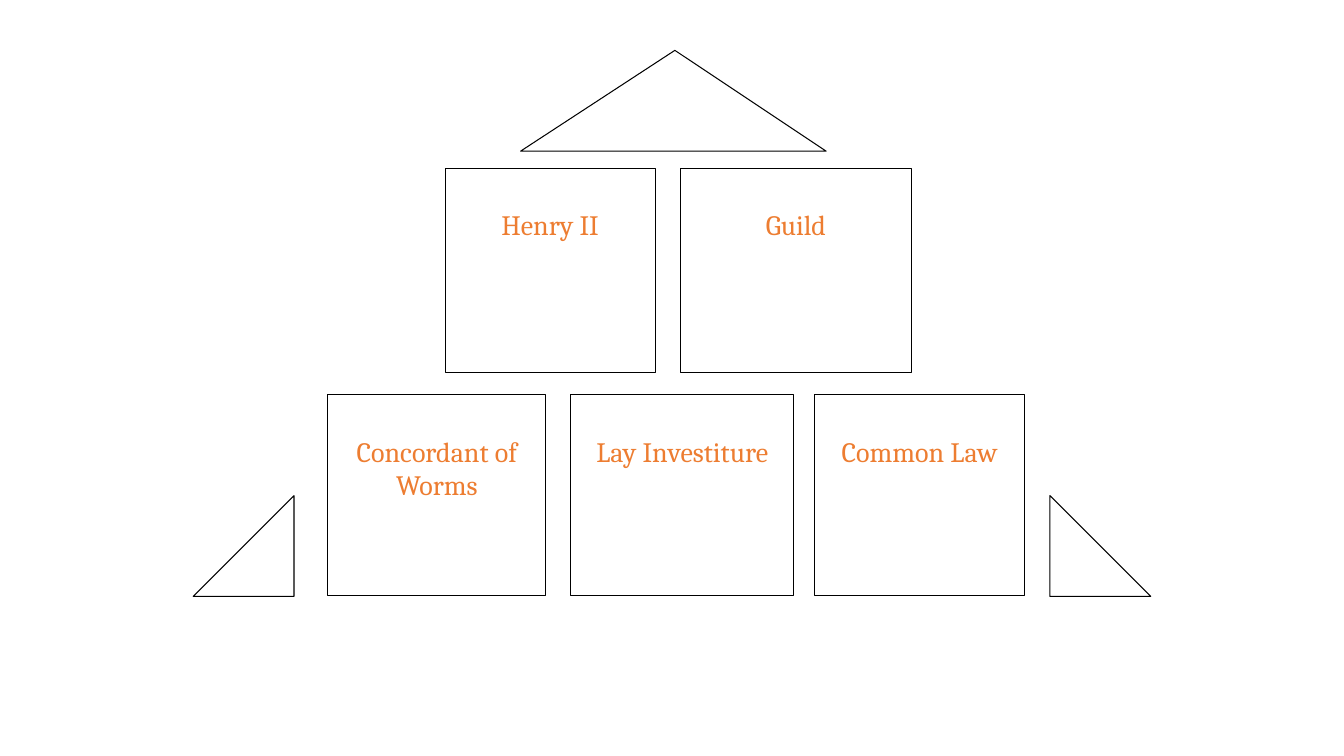
import pptx
import pptx.dml.color
import pptx.enum.shapes
import pptx.enum.text
import pptx.util

Cm = pptx.util.Cm
Shape = pptx.enum.shapes.MSO_SHAPE
WHITE = pptx.dml.color.RGBColor(0xFF, 0xFF, 0xFF)
BLACK = pptx.dml.color.RGBColor(0x00, 0x00, 0x00)
ORANGE = pptx.dml.color.RGBColor(0xED, 0x7D, 0x31)


class HouseSlide:
    font_format = {"name": "Cambria", "size": pptx.util.Pt(20)}
    frame_format = {
        "word_wrap": True,
        "vertical_anchor": pptx.enum.text.MSO_ANCHOR.TOP,
        "margin_top": Cm(0.99),
    }

    def __init__(self, deck):
        self.page = deck.slides.add_slide(deck.slide_layouts[6])

    def outline(self, kind, left, top, width, height):
        shape = self.page.shapes.add_shape(
            kind, Cm(left), Cm(top), Cm(width), Cm(height)
        )
        shape.shadow.inherit = False
        shape.fill.solid()
        shape.fill.fore_color.rgb = WHITE
        shape.line.color.rgb = BLACK
        shape.line.width = pptx.util.Pt(0.75)
        return shape

    def term_box(self, term, left, top, width, height):
        box = self.outline(Shape.RECTANGLE, left, top, width, height)
        frame = box.text_frame
        for name, value in self.frame_format.items():
            setattr(frame, name, value)
        para = frame.paragraphs[0]
        para.alignment = pptx.enum.text.PP_ALIGN.CENTER
        span = para.add_run()
        span.text = term
        for name, value in self.font_format.items():
            setattr(span.font, name, value)
        span.font.color.rgb = ORANGE

    def term_row(self, top, height, terms):
        for term, left, width in terms:
            self.term_box(term, left, top, width, height)


def main():
    deck = pptx.Presentation()
    deck.slide_width = Cm(33.87)
    deck.slide_height = Cm(19.05)
    house = HouseSlide(deck)

    house.term_row(4.24, 5.16, [
        ("Guild", 17.15, 5.82),
        ("Henry II", 11.22, 5.29),
    ])
    house.term_row(9.95, 5.06, [
        ("Common Law", 20.53, 5.29),
        ("Lay Investiture", 14.39, 5.61),
        ("Concordant of Worms", 8.26, 5.5),
    ])

    roof = house.outline(Shape.ISOSCELES_TRIANGLE, 13.12, 1.27, 7.7, 2.54)
    roof.adjustments[0] = 0.505
    for left, rotation in ((4.87, 270), (26.46, 0)):
        corner = house.outline(Shape.RIGHT_TRIANGLE, left, 12.49, 2.54, 2.54)
        corner.rotation = rotation

    deck.save("out.pptx")


if __name__ == "__main__":
    main()
